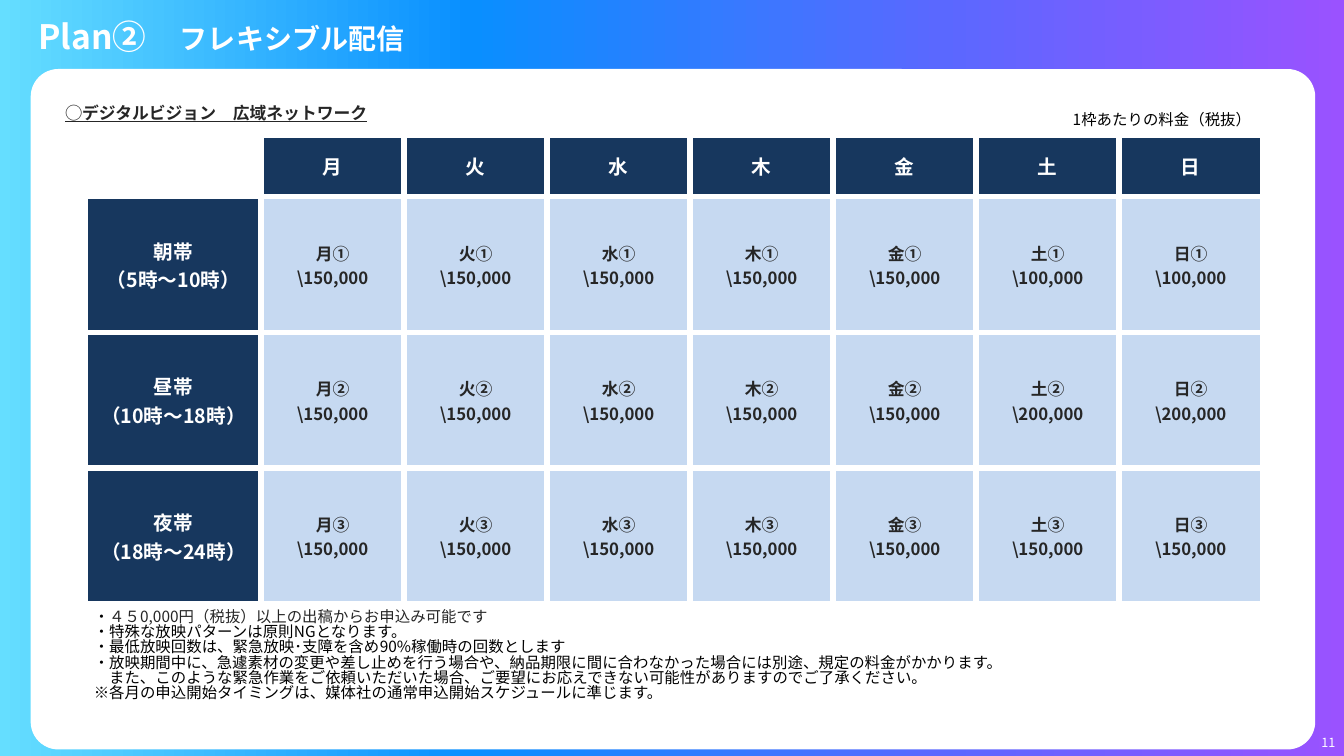
from copy import deepcopy
from lxml.etree import SubElement
from pptx import Presentation
from pptx.dml.color import RGBColor
from pptx.enum.shapes import MSO_SHAPE
from pptx.enum.text import MSO_ANCHOR, MSO_AUTO_SIZE, PP_ALIGN
from pptx.oxml.ns import qn
from pptx.util import Inches, Pt

FACE = "Noto Sans CJK JP"
WHITE, BLACK, GREY = "FFFFFF", "000000", "262626"
NAVY, PALE = "17375E", "C6D9F1"
FADE = [(0, "65DEFF"), (0.35, "098FFF"), (0.7, "5A68FF"), (1, "9A52FF")]

DAYS = "月火水木金土日"
BANDS = [
    ("朝帯", "（5時～10時）", "➀", {"土": "100,000", "日": "100,000"}),
    ("昼帯", "（10時～18時）", "②", {"土": "200,000", "日": "200,000"}),
    ("夜帯", "（18時～24時）", "➂", {}),
]
NOTES = [
    [("・", BLACK), ("４５0,000円（税抜）以上の出稿からお申込み可能です", GREY)],
    [("・特殊な放映パターンは原則NGとなります。", BLACK)],
    [("・最低放映回数は、緊急放映･支障を含め90%稼働時の回数とします", BLACK)],
    [("・放映期間中に、急遽素材の変更や差し止めを行う場合や、納品期限に間に合わなかった場合には"
      "別途、規定の料金がかかります。", BLACK)],
    [("また、このような緊急作業をご依頼いただいた場合、ご要望にお応えできない可能性がありますので"
      "ご了承ください。", BLACK)],
    [("※各月の申込開始タイミングは、媒体社の通常申込開始スケジュールに準じます。", BLACK)],
]


def paint(target, tint):
    target.rgb = RGBColor.from_string(tint)


def fill(part, tint):
    part.fill.solid()
    paint(part.fill.fore_color, tint)


def apply(part, values):
    for name, value in values.items():
        setattr(part, name, value)


def write(para, text, size, tint, **style):
    run = para.add_run()
    run.text = text
    apply(run.font, {"name": FACE, "size": Pt(size), **style})
    paint(run.font.color, tint)
    SubElement(run.font._element, qn("a:ea"), typeface=FACE)


def place(shape, box):
    apply(shape, dict(zip(("left", "top", "width", "height"), map(Inches, box))))


def frame(shape, anchor=MSO_ANCHOR.TOP):
    apply(shape.text_frame, {"word_wrap": True, "auto_size": MSO_AUTO_SIZE.NONE,
                             "vertical_anchor": anchor})
    return shape.text_frame


def label(slide, box, text, size, tint, align, anchor=MSO_ANCHOR.TOP, **style):
    area = slide.shapes.add_textbox(*map(Inches, box))
    para = frame(area, anchor).paragraphs[0]
    para.alignment = align
    write(para, text, size, tint, **style)
    return para


# Gradient backdrop and white card
def backdrop(slide, box):
    left, top, width, height = box
    sheet = slide.shapes.add_shape(MSO_SHAPE.RECTANGLE, *map(Inches, box))
    sheet.shadow.inherit = False
    sheet.line.fill.background()
    sheet.fill.gradient()
    sheet.fill.gradient_angle = 0
    stops = sheet.fill.gradient_stops
    first = stops[0]._gs
    for _ in range(len(FADE) - len(stops)):
        first.addnext(deepcopy(first))
    for stop, (spot, tint) in zip(sheet.fill.gradient_stops, FADE):
        stop.position = spot
        paint(stop.color, tint)

    card = slide.shapes.add_shape(
        MSO_SHAPE.ROUNDED_RECTANGLE, Inches(left + 0.31), Inches(top + 0.69),
        Inches(width - 0.6), Inches(height - 0.76))
    card.shadow.inherit = False
    card.adjustments[0] = 0.04
    fill(card, WHITE)
    fill(card.line, WHITE)
    card.line.width = Pt(0.75)


# Title in the top band
def heading(slide, box):
    title = slide.shapes.title
    place(title, box)
    para = frame(title, MSO_ANCHOR.MIDDLE).paragraphs[0]
    para.alignment = PP_ALIGN.LEFT
    write(para, "Plan②　", 24, WHITE, bold=True)
    write(para, "フレキシブル配信", 20, WHITE, bold=True)
    slide.shapes.element.append(title.element)


# Captions above the table
def captions(slide, box):
    left, top, width, height = box
    label(slide, (left + 7.6, top + 0.05, 4.36, 0.29), "1枠あたりの料金（税抜）",
          11, BLACK, PP_ALIGN.RIGHT)
    para = label(slide, (left, top, width, height),
                 "◯デジタルビジョン　広域ネットワーク", 12, GREY,
                 PP_ALIGN.LEFT, bold=True, underline=True)
    para.line_spacing = 0.9


def edge(cell):
    props = cell._tc.get_or_add_tcPr()
    for spot, side in enumerate(("lnL", "lnR", "lnT", "lnB")):
        line = props.makeelement(qn("a:" + side), {"w": str(Pt(4.5))})
        tint = SubElement(SubElement(line, qn("a:solidFill")), qn("a:srgbClr"))
        tint.set("val", WHITE)
        props.insert(spot, line)


def entry(cell, lines, head):
    fill(cell, NAVY if head else PALE)
    apply(cell, {"vertical_anchor": MSO_ANCHOR.MIDDLE, "margin_bottom": 0,
                 "margin_left": Inches(0.01), "margin_right": Inches(0.01),
                 "margin_top": Inches(0.01)})
    text = cell.text_frame
    for spot, line in enumerate(lines):
        para = text.add_paragraph() if spot else text.paragraphs[0]
        para.alignment = PP_ALIGN.CENTER
        write(para, line, 14 if head else 12, WHITE if head else GREY, bold=True)


# Price table: time bands by weekday
def prices(slide, box):
    left, top, width, height = box
    rows, cols = len(BANDS) + 1, len(DAYS) + 1
    table = slide.shapes.add_table(rows, cols, *map(Inches, box)).table
    apply(table, {"first_row": False, "horz_banding": False})
    side, head = 1.74, 0.61
    for spot, col in enumerate(table.columns):
        col.width = Inches((width - side) / len(DAYS) if spot else side)
    for spot, row in enumerate(table.rows):
        row.height = Inches((height - head) / len(BANDS) if spot else head)

    table.cell(0, 0).fill.background()
    for col, day in enumerate(DAYS, 1):
        entry(table.cell(0, col), [day], True)
    for row, (band, hours, mark, rates) in enumerate(BANDS, 1):
        entry(table.cell(row, 0), [band, hours], True)
        for col, day in enumerate(DAYS, 1):
            rate = rates.get(day, "150,000")
            entry(table.cell(row, col), [day + mark, "\\" + rate], False)
    for cell in table.iter_cells():
        edge(cell)


# Conditions below the table
def terms(slide, box):
    body = slide.placeholders[1]
    place(body, box)
    text = frame(body)
    for spot, parts in enumerate(NOTES):
        para = text.add_paragraph() if spot else text.paragraphs[0]
        apply(para, {"space_before": Pt(0), "line_spacing": 0.83})
        props = para._p.get_or_add_pPr()
        inset = Pt(11) if parts[0][0].startswith("また") else 0
        props.set("marL", str(inset))
        props.set("indent", "0")
        SubElement(props, qn("a:buNone"))
        for part, tint in parts:
            write(para, part, 11, tint)
    slide.shapes.element.append(body.element)


def main():
    deck = Presentation()
    deck.slide_width, deck.slide_height = Inches(13.33), Inches(7.5)
    slide = deck.slides.add_slide(deck.slide_layouts[1])
    backdrop(slide, (0, 0, 13.33, 7.5))
    label(slide, (12.88, 7.24, 0.59, 0.25), "11", 9, WHITE,
          PP_ALIGN.CENTER, MSO_ANCHOR.MIDDLE)
    heading(slide, (0.28, 0.11, 12.83, 0.49))
    captions(slide, (0.55, 0.99, 10.54, 0.57))
    prices(slide, (0.85, 1.34, 11.67, 4.65))
    terms(slide, (0.83, 6, 11.67, 1.4))
    deck.save("out.pptx")


if __name__ == "__main__":
    main()
